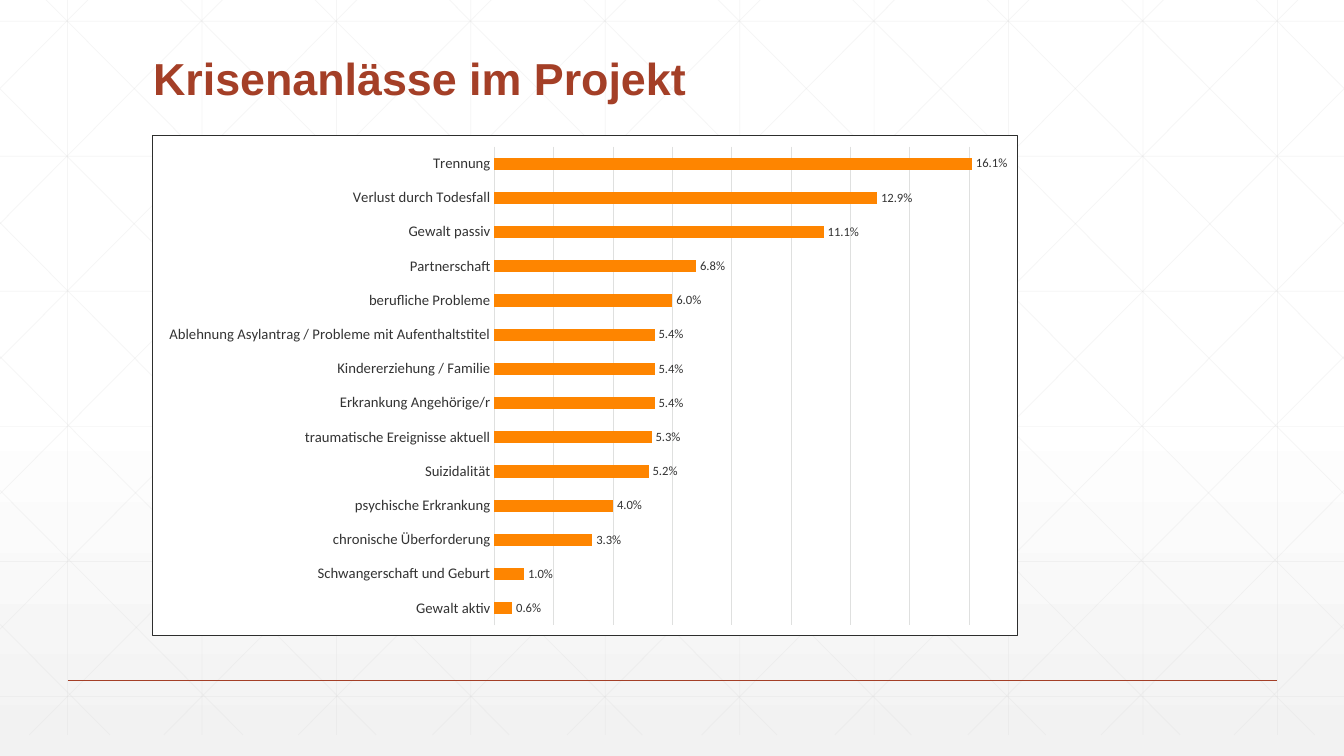
from typing import Any, NamedTuple

from lxml import etree
from pptx import Presentation
from pptx.chart.data import CategoryChartData
from pptx.dml.color import RGBColor
from pptx.enum.chart import XL_CHART_TYPE, XL_LABEL_POSITION, XL_TICK_MARK
from pptx.enum.shapes import MSO_CONNECTOR
from pptx.enum.text import MSO_ANCHOR
from pptx.oxml import parse_xml
from pptx.oxml.ns import nsdecls, qn
from pptx.util import Inches, Pt

BAR = XL_CHART_TYPE.BAR_CLUSTERED
OUTSIDE_END = XL_LABEL_POSITION.OUTSIDE_END
NO_TICK = XL_TICK_MARK.NONE
STRAIGHT = MSO_CONNECTOR.STRAIGHT
BOTTOM = MSO_ANCHOR.BOTTOM

COLORS = {
    "white": "FFFFFF",
    "shade": "F2F2F2",
    "mesh": "D9D9D9",
    "accent": "A43F27",
    "bar": "FE8500",
    "grid": "DFE0DF",
    "border": "2D2E2D",
    "label": "333333",
}
WIDTH, HEIGHT = 13.33, 7.5
MESH_TOP, MESH_BOTTOM = -0.21, 7.29
MESH_STEP = 4 / 3
MESH_SLOPE = 7.5 / 7.455


class Line(NamedTuple):
    x1: float
    y1: float
    x2: float
    y2: float
    color: str = "mesh"
    weight: float = 0.5
    opacity: int = 25


class Occasion(NamedTuple):
    name: str
    share: float


OCCASIONS = [
    Occasion("Trennung", 0.161),
    Occasion("Verlust durch Todesfall", 0.129),
    Occasion("Gewalt passiv", 0.111),
    Occasion("Partnerschaft", 0.068),
    Occasion("berufliche Probleme", 0.06),
    Occasion("Ablehnung Asylantrag / Probleme mit Aufenthaltstitel", 0.054),
    Occasion("Kindererziehung / Familie", 0.054),
    Occasion("Erkrankung Angehörige/r", 0.054),
    Occasion("traumatische Ereignisse aktuell", 0.053),
    Occasion("Suizidalität", 0.052),
    Occasion("psychische Erkrankung", 0.04),
    Occasion("chronische Überforderung", 0.033),
    Occasion("Schwangerschaft und Geburt", 0.01),
    Occasion("Gewalt aktiv", 0.006),
]


def rgb(name: str) -> RGBColor:
    return RGBColor.from_string(COLORS[name])


def apply(target: Any, values: dict[str, Any]) -> None:
    for name, value in values.items():
        setattr(target, name, value)


def style_font(font: Any, face: str, size: float, color: str, bold: bool = False) -> None:
    apply(font, {"name": face, "size": Pt(size), "bold": bold})
    font.color.rgb = rgb(color)


def style_line(line: Any, color: str, weight: float) -> None:
    line.color.rgb = rgb(color)
    line.width = Pt(weight)


def draw_line(slide: Any, line: Line) -> None:
    ends = [Inches(v) for v in (line.x1, line.y1, line.x2, line.y2)]
    connector = slide.shapes.add_connector(STRAIGHT, *ends)
    style_line(connector.line, line.color, line.weight)
    properties = connector.element.spPr
    if line.opacity < 100:
        color = properties.find(".//" + qn("a:srgbClr"))
        etree.SubElement(color, qn("a:alpha")).set("val", str(line.opacity * 1000))
    etree.SubElement(properties, qn("a:effectLst"))


def mesh_lines() -> list[Line]:
    lines = [Line(x, MESH_TOP, x, MESH_BOTTOM)
             for x in (0.67 + MESH_STEP * i for i in range(10))]
    lines += [Line(0, y, WIDTH, y) for y in (0.21 + 1.34 * i for i in range(6))]

    # Diagonals from the top edge, cut at the right edge, then mirrored
    diagonals = []
    for i in range(10):
        x = 0.25 + MESH_STEP * i
        drop = min(MESH_BOTTOM - MESH_TOP, (WIDTH - x) * MESH_SLOPE)
        diagonals.append(Line(x, MESH_TOP, x + drop / MESH_SLOPE, MESH_TOP + drop))

    # Diagonals from the bottom edge up to the left edge, then mirrored
    for i in range(5):
        x = 6.37 - 1.32 * i
        diagonals.append(Line(x, MESH_BOTTOM, 0, MESH_BOTTOM - x * MESH_SLOPE))
    mirrored = [d._replace(x1=WIDTH - d.x1, x2=WIDTH - d.x2) for d in diagonals]
    return lines + diagonals + mirrored


def paint_background(slide: Any) -> None:
    fill = slide.background.fill
    fill.gradient()
    fill.gradient_angle = 270
    stops = (("white", 0.53), ("shade", 1.0))
    for stop, (color, position) in zip(fill.gradient_stops, stops):
        stop.color.rgb = rgb(color)
        stop.position = position


def add_title(slide: Any, text: str) -> None:
    title = slide.shapes.add_textbox(Inches(1.42), Inches(0.38), Inches(10.5), Inches(0.71))
    apply(title.text_frame, {"word_wrap": True, "vertical_anchor": BOTTOM})
    heading = title.text_frame.paragraphs[0]
    heading.line_spacing = 0.9
    run = heading.add_run()
    run.text = text
    style_font(run.font, "Arial", 32, "accent", bold=True)


def frame_chart(chart: Any) -> None:
    """Fix the plot's place and give the chart a white ground and a border."""
    plot_area = chart._chartSpace.find(".//" + qn("c:plotArea"))
    for layout in plot_area.findall(qn("c:layout")):
        plot_area.remove(layout)
    place = {"x": 0.395, "y": 0.022, "w": 0.583, "h": 0.958}
    sizes = "".join(f'<c:{side} val="{value}"/>' for side, value in place.items())
    plot_area.insert(0, parse_xml(
        f'<c:layout {nsdecls("c")}><c:manualLayout><c:layoutTarget val="inner"/>'
        f'<c:xMode val="edge"/><c:yMode val="edge"/>{sizes}</c:manualLayout></c:layout>'))
    ground, border = (
        f'<a:solidFill><a:srgbClr val="{COLORS[name]}"/></a:solidFill>'
        for name in ("white", "border"))
    chart._chartSpace.find(qn("c:chart")).addnext(parse_xml(
        f'<c:spPr {nsdecls("c", "a")}>{ground}'
        f'<a:ln w="{int(Pt(0.75))}">{border}</a:ln></c:spPr>'))


def add_occasions_chart(slide: Any) -> None:
    shares = CategoryChartData(number_format="0.0%")
    shares.categories = [occasion.name for occasion in OCCASIONS]
    shares.add_series("Anteil", [occasion.share for occasion in OCCASIONS])
    chart = slide.shapes.add_chart(
        BAR, Inches(1.51), Inches(1.34), Inches(8.59), Inches(4.97), shares).chart
    apply(chart, {"has_legend": False, "has_title": False})
    style_font(chart.font, "Calibri", 10, "label")

    # Bars and their labels
    plot = chart.plots[0]
    apply(plot, {"gap_width": 182, "vary_by_categories": False, "has_data_labels": True})
    bars = plot.series[0].format.fill
    bars.solid()
    bars.fore_color.rgb = rgb("bar")
    apply(plot.data_labels, {"show_value": True, "position": OUTSIDE_END,
                             "number_format": "0.0%", "number_format_is_linked": False})
    style_font(plot.data_labels.font, "Calibri", 9, "label")

    # Axes
    names = chart.category_axis
    apply(names, {"reverse_order": True, "major_tick_mark": NO_TICK,
                  "minor_tick_mark": NO_TICK, "has_major_gridlines": False})
    style_font(names.tick_labels.font, "Calibri", 10.5, "label")
    style_line(names.format.line, "grid", 0.75)
    scale = chart.value_axis
    apply(scale, {"minimum_scale": 0, "maximum_scale": 0.17, "major_unit": 0.02,
                  "has_major_gridlines": True, "visible": False})
    style_line(scale.major_gridlines.format.line, "grid", 0.75)
    frame_chart(chart)


def main() -> None:
    deck = Presentation()
    apply(deck, {"slide_width": Inches(WIDTH), "slide_height": Inches(HEIGHT)})
    slide = deck.slides.add_slide(deck.slide_layouts[6])

    # Background mesh and footer rule
    paint_background(slide)
    footer_rule = Line(0.67, 6.75, 12.67, 6.75, "accent", 1, 100)
    for line in [*mesh_lines(), footer_rule]:
        draw_line(slide, line)

    # Content
    add_title(slide, "Krisenanlässe im Projekt")
    add_occasions_chart(slide)
    deck.save("out.pptx")


if __name__ == "__main__":
    main()
